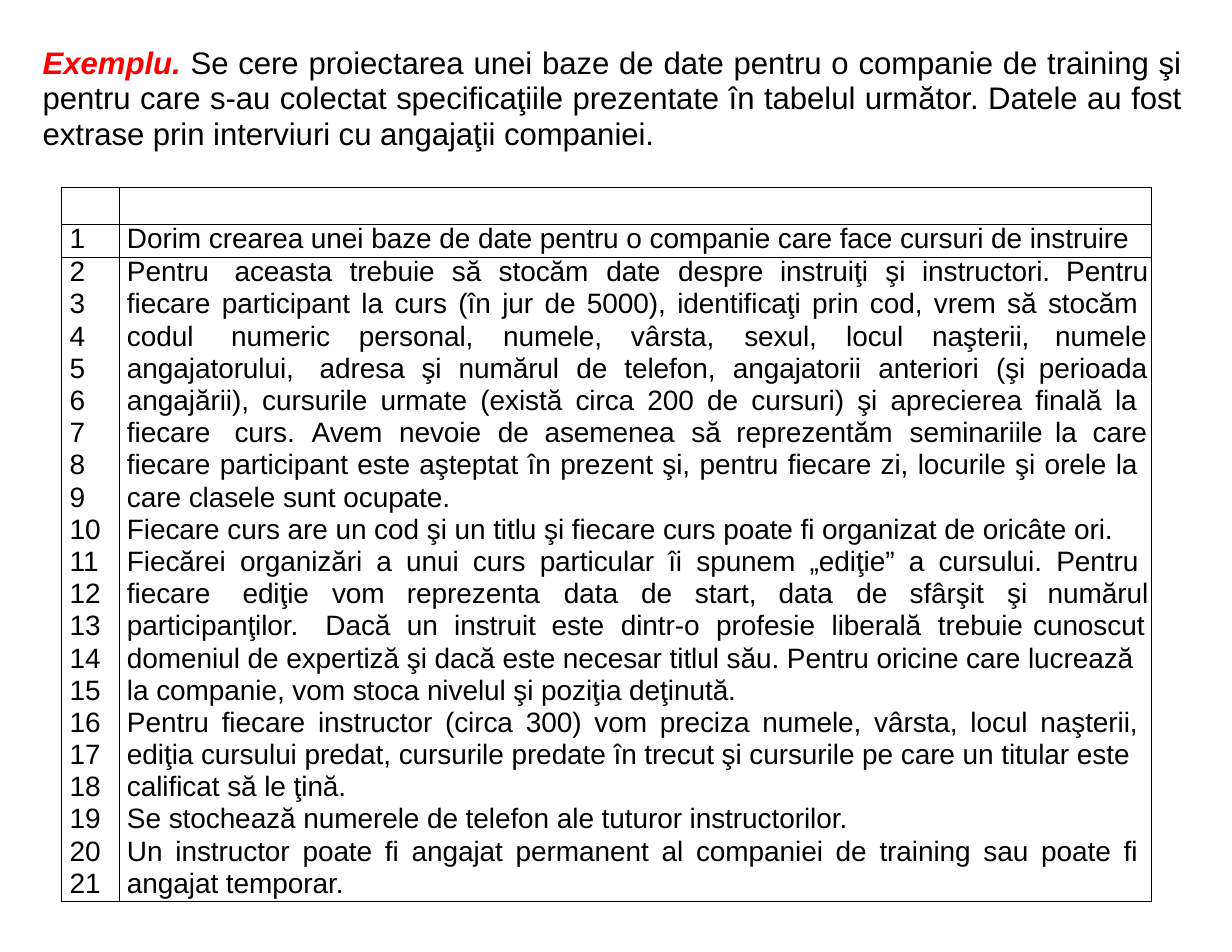
import pptx
import pptx.dml.color
import pptx.enum.text
import pptx.oxml.ns
import pptx.util
from lxml import etree
from pptx.util import Cm, Pt

FONT = "Arial"
BLACK = "000000"
RED = "FF0000"
TRACKING = -5

INTRO = (
    "Se cere proiectarea unei baze de date pentru o companie de training şi "
    "pentru care s-au colectat specificaţiile prezentate în tabelul următor. "
    "Datele au fost extrase prin interviuri cu angajaţii companiei."
)

# Each line: text, extra width of its word gaps in points, tab stops in cm
SPECIFICATIONS = [
    ("Dorim crearea unei baze de date pentru o companie care face cursuri de instruire", 0, []),
    ("Pentru\taceasta\ttrebuie\tsă\tstocăm\tdate\tdespre\tinstruiţi\tşi\tinstructori.\tPentru", 0,
     [2.44, 5.05, 7.37, 8.43, 10.87, 12.5, 14.81, 17.2, 18.03, 21.3]),
    ("fiecare participant la curs (în jur de 5000), identificaţi prin cod, vrem să stocăm", 2.3, []),
    ("codul\tnumeric\tpersonal,\tnumele,\tvârsta,\tsexul,\tlocul\tnaşterii,\tnumele", 0,
     [2.36, 5.26, 8.53, 11.43, 14, 16.31, 18.26, 21.05]),
    ("angajatorului,\tadresa\tşi\tnumărul\tde\ttelefon,\tangajatorii\tanteriori\t(şi\tperioada", 0,
     [4.37, 6.68, 7.52, 10.19, 11.28, 13.74, 17.04, 19.71, 20.68]),
    ("angajării), cursurile urmate (există circa 200 de cursuri) şi aprecierea finală la", 3.5, []),
    ("fiecare\tcurs.\tAvem\tnevoie\tde\tasemenea\tsă\treprezentăm\tseminariile\tla\tcare", 0,
     [2.44, 4.19, 6.17, 8.41, 9.47, 12.8, 13.82, 17.75, 21.05, 21.9]),
    ("fiecare participant este aşteptat în prezent şi, pentru fiecare zi, locurile şi orele la", 1, []),
    ("care clasele sunt ocupate.", 0, []),
    ("Fiecare curs are un cod şi un titlu şi fiecare curs poate fi organizat de oricâte ori.", 0, []),
    ("Fiecărei organizări a unui curs particular îi spunem „ediţie” a cursului. Pentru", 4.1, []),
    ("fiecare\tediţie\tvom\treprezenta\tdata\tde\tstart,\tdata\tde\tsfârşit\tşi\tnumărul", 0,
     [2.62, 4.65, 6.35, 9.91, 11.66, 12.88, 14.78, 16.54, 17.75, 19.96, 20.88]),
    ("participanţilor.\tDacă\tun\tinstruit\teste\tdintr-o\tprofesie\tliberală\ttrebuie\tcunoscut", 0,
     [4.5, 6.35, 7.42, 9.63, 11.2, 13.36, 15.98, 18.39, 20.55]),
    ("domeniul de expertiză şi dacă este necesar titlul său. Pentru oricine care lucrează", 0, []),
    ("la companie, vom stoca nivelul şi poziţia deţinută.", 0, []),
    ("Pentru fiecare instructor (circa 300) vom preciza numele, vârsta, locul naşterii,", 3.2, []),
    ("ediţia cursului predat, cursurile predate în trecut şi cursurile pe care un titular este", 0, []),
    ("calificat să le ţină.", 0, []),
    ("Se stochează numerele de telefon ale tuturor instructorilor.", 0, []),
    ("Un instructor poate fi angajat permanent al companiei de training sau poate fi", 3.2, []),
    ("angajat temporar.", 0, []),
]


def color(value):
    return pptx.dml.color.RGBColor.from_string(value)


def apply(target, values):
    for name, value in values.items():
        setattr(target, name, value)


def add_run(paragraph, text, size, hex_color=BLACK, tracking=TRACKING, **style):
    run = paragraph.add_run()
    run.text = text
    apply(run.font, {"name": FONT, "size": Pt(size), **style})
    run.font.color.rgb = color(hex_color)
    run.font._element.set("spc", str(tracking))


def add_tab_stops(paragraph, stops):
    tab_list = etree.SubElement(paragraph._p.get_or_add_pPr(), pptx.oxml.ns.qn("a:tabLst"))
    for stop in stops:
        etree.SubElement(tab_list, pptx.oxml.ns.qn("a:tab"), pos=str(Cm(stop)), algn="l")


def set_borders(cell, drawn):
    """Draw a thin line on each side named in drawn and hide the others."""
    properties = cell._tc.get_or_add_tcPr()
    for side in "LRTB":
        line = etree.SubElement(properties, pptx.oxml.ns.qn("a:ln" + side), w=str(Pt(0.5)))
        if side in drawn:
            fill = etree.SubElement(line, pptx.oxml.ns.qn("a:solidFill"))
            etree.SubElement(fill, pptx.oxml.ns.qn("a:srgbClr"), val=BLACK)
        else:
            etree.SubElement(line, pptx.oxml.ns.qn("a:noFill"))


def write_line(cell, text, gap=0, stops=()):
    paragraph = cell.text_frame.paragraphs[0]
    paragraph._p.get_or_add_pPr().set("marL", str(Cm(0.18)))
    if stops:
        add_tab_stops(paragraph, stops)
    paragraph.line_spacing = Pt(19.7)
    if not gap:
        add_run(paragraph, text, 18)
        return
    for index, word in enumerate(text.split(" ")):
        if index:
            add_run(paragraph, " ", 18, tracking=round(gap * 100))
        add_run(paragraph, word, 18)


def add_intro(slide):
    box = slide.shapes.add_textbox(Cm(0.97), Cm(0.91), Cm(26.01), Cm(2.54))
    frame = box.text_frame
    apply(frame, {"word_wrap": True, "margin_left": 0, "margin_right": Cm(0.2),
                  "margin_top": Cm(0.1), "margin_bottom": 0})
    paragraph = frame.paragraphs[0]
    apply(paragraph, {"alignment": pptx.enum.text.PP_ALIGN.JUSTIFY, "line_spacing": Pt(23)})
    add_run(paragraph, "Exemplu. ", 20, RED, bold=True, italic=True)
    add_run(paragraph, INTRO, 20)


def add_specifications(slide):
    row_heights = [0.84, 0.75] + [0.73] * (len(SPECIFICATIONS) - 1)
    column_widths = [1.3, 23.42]
    table = slide.shapes.add_table(
        len(row_heights), len(column_widths), Cm(1.4), Cm(4.24),
        Cm(sum(column_widths)), Cm(sum(row_heights))).table
    apply(table, {"first_row": False, "horz_banding": False})
    for column, width in zip(table.columns, column_widths):
        column.width = Cm(width)

    ruled_edges = {0, 1, 2, len(row_heights)}
    for index, (row, height) in enumerate(zip(table.rows, row_heights)):
        row.height = Cm(height)
        drawn = "LR" + "T" * (index in ruled_edges) + "B" * (index + 1 in ruled_edges)
        for cell in row.cells:
            apply(cell, {"margin_left": 0, "margin_right": 0,
                         "margin_top": 0, "margin_bottom": 0})
            set_borders(cell, drawn)
            cell.fill.background()
            if index == 0:
                cell.text_frame.paragraphs[0].font.size = Pt(18)

    for number, line in enumerate(SPECIFICATIONS, start=1):
        write_line(table.cell(number, 0), str(number))
        write_line(table.cell(number, 1), *line)


def main():
    presentation = pptx.Presentation()
    apply(presentation, {"slide_width": Cm(27.94), "slide_height": Cm(21.59)})
    slide = presentation.slides.add_slide(presentation.slide_layouts[6])
    add_intro(slide)
    add_specifications(slide)
    presentation.save("out.pptx")


if __name__ == "__main__":
    main()
